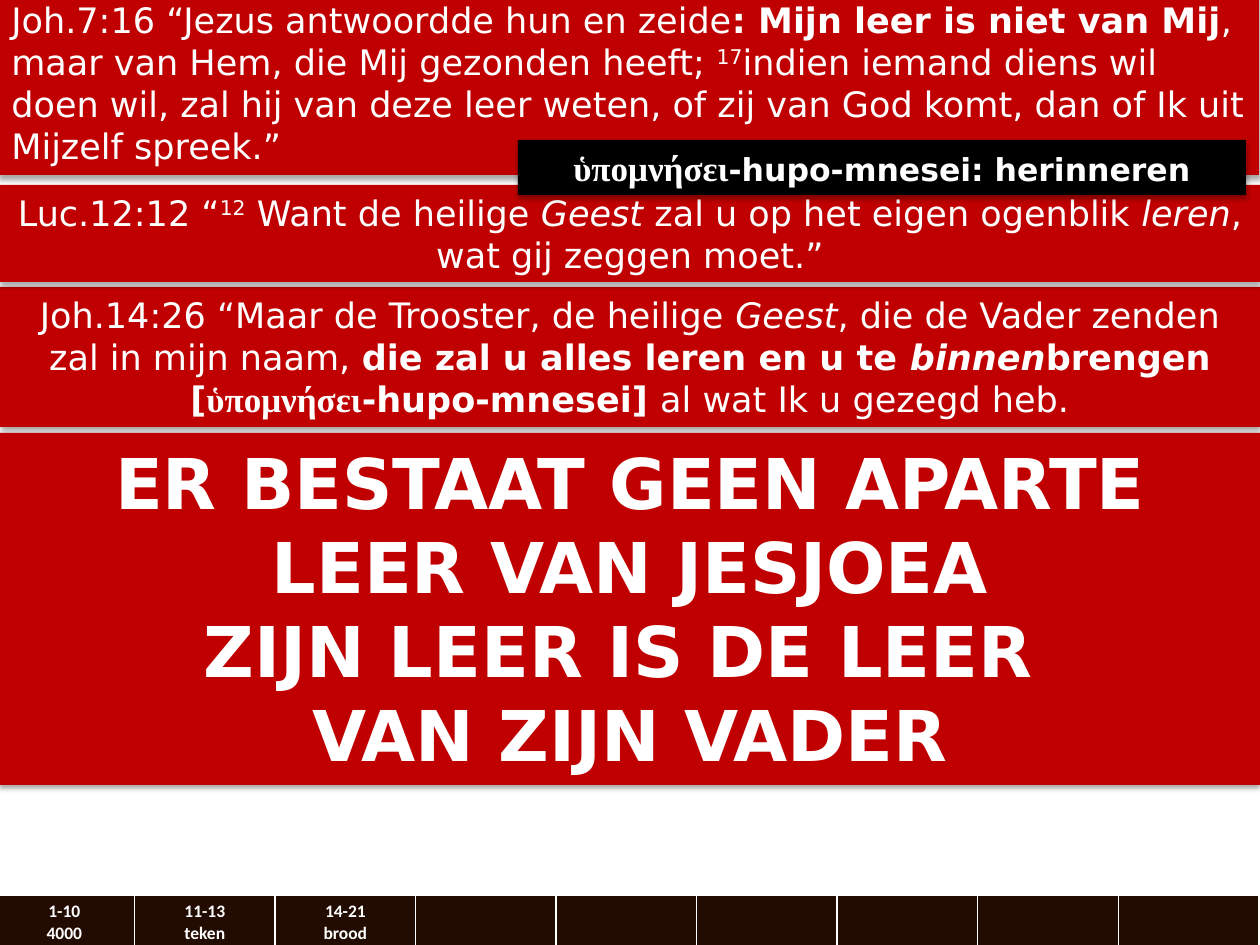
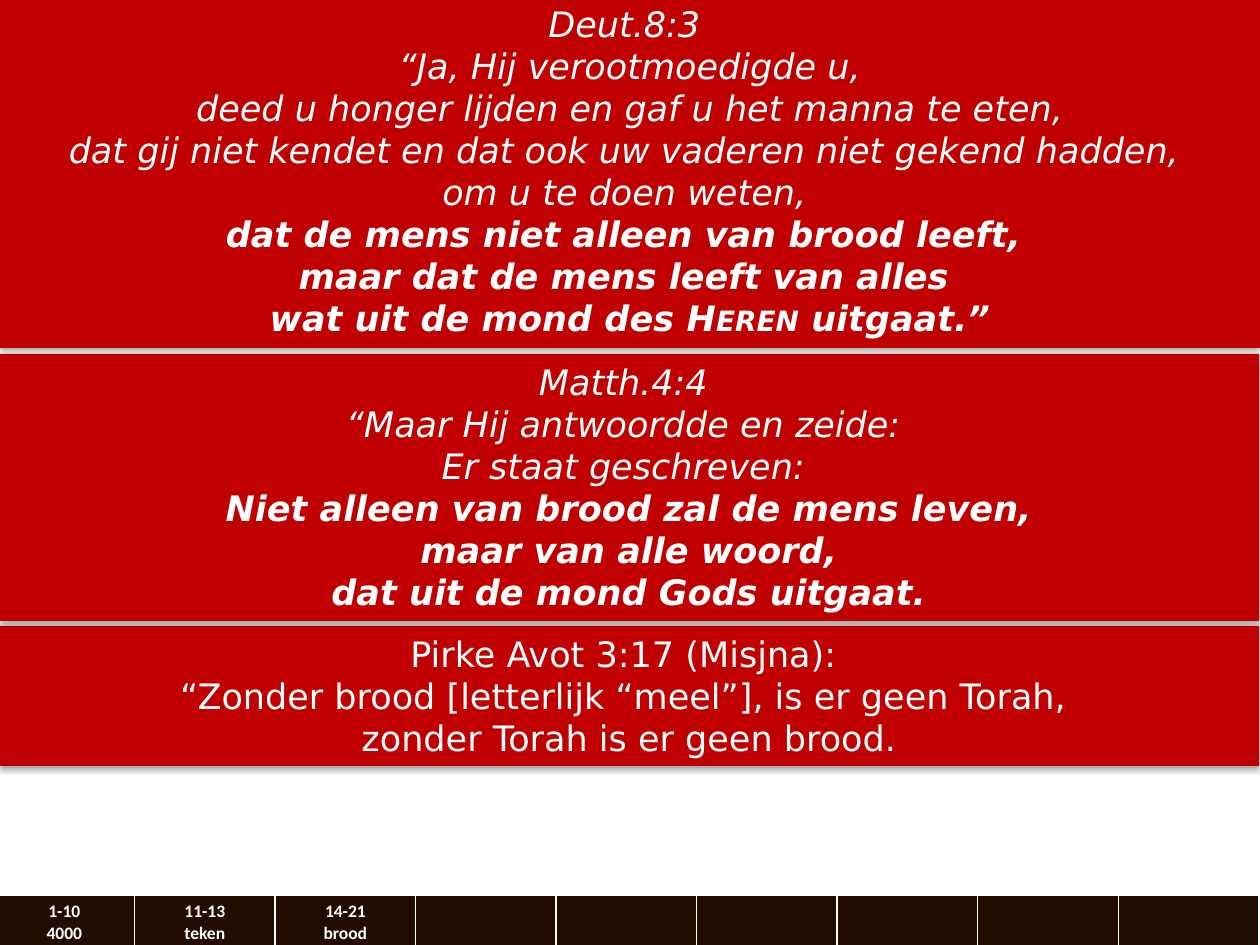
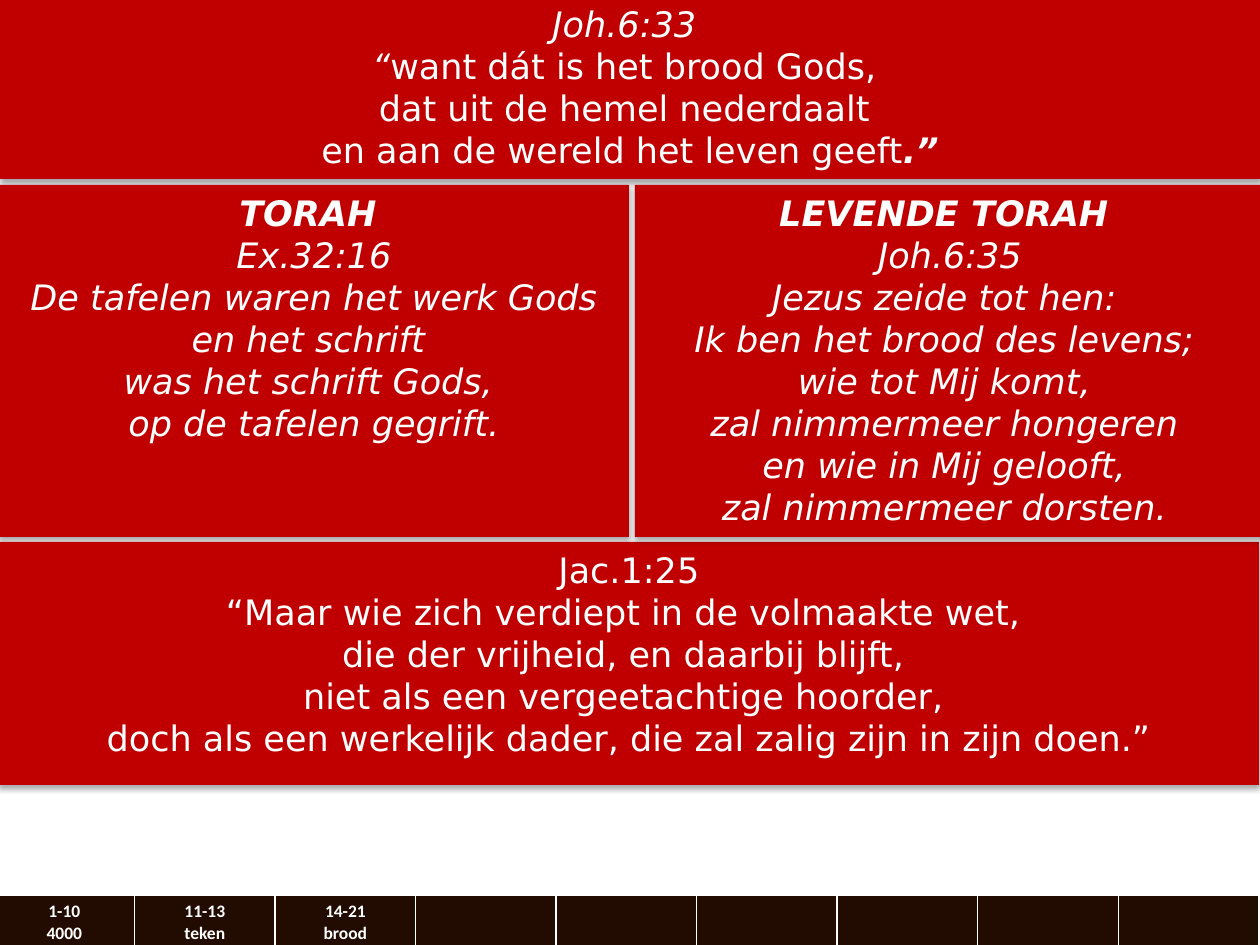
from lxml.etree import SubElement
from pptx import Presentation
from pptx.dml.color import RGBColor
from pptx.enum.shapes import MSO_SHAPE
from pptx.enum.text import MSO_ANCHOR, PP_ALIGN
from pptx.oxml.ns import qn
from pptx.util import Emu, Pt

RED = RGBColor(0xC0, 0x00, 0x00)
BLACK = RGBColor(0x00, 0x00, 0x00)
BROWN = RGBColor(0x22, 0x0B, 0x00)
WHITE = RGBColor(0xFF, 0xFF, 0xFF)
BODY_FONT = "DejaVu Sans"
GREEK_FONT = "Times New Roman"
FOOTER_FONT = "Calibri"
EMU_PER_PX = 914400 / 126
FOOTER_BOX = (-6, 895, 1265, 54)
FOOTER_COLUMNS = 9
FOOTER_LABELS = [("1-10", "4000"), ("11-13", "teken"), ("14-21", "brood")]

BOLD = {"bold": True}
ITALIC = {"italic": True}
BOLD_ITALIC = {"bold": True, "italic": True}
RAISED = {"baseline": 30000}
GREEK = {"bold": True, "font": GREEK_FONT}


def px(length):
    return Emu(round(length * EMU_PER_PX))


def lines(*texts, **style):
    return [[(text, style)] for text in texts]


def add_text(paragraph, text, size=20, font=BODY_FONT, bold=False, italic=False,
             baseline=0, small_caps=False):
    run = paragraph.add_run()
    run.text = text
    run.font.size = Pt(size)
    run.font.name = font
    run.font.bold = bold
    run.font.italic = italic
    run.font.color.rgb = WHITE
    properties = run.font._element
    if baseline:
        properties.set("baseline", str(baseline))
    if small_caps:
        properties.set("cap", "small")


def fill_frame(frame, paragraphs, alignment=PP_ALIGN.CENTER):
    for index, runs in enumerate(paragraphs):
        paragraph = frame.add_paragraph() if index else frame.paragraphs[0]
        paragraph.alignment = alignment
        for text, style in runs:
            add_text(paragraph, text, **style)


def add_shadow(shape):
    shape.shadow.inherit = False
    effects = shape._element.spPr.find(qn("a:effectLst"))
    shadow = SubElement(effects, qn("a:outerShdw"), blurRad="39370", dist="22860",
                        dir="5400000", rotWithShape="0")
    color = SubElement(shadow, qn("a:srgbClr"), val=str(BLACK))
    SubElement(color, qn("a:alpha"), val="35000")


def add_panel(slide, box, paragraphs, color=RED, alignment=PP_ALIGN.CENTER):
    shape = slide.shapes.add_shape(MSO_SHAPE.RECTANGLE, *map(px, box))
    shape.fill.solid()
    shape.fill.fore_color.rgb = color
    shape.line.fill.background()
    add_shadow(shape)
    frame = shape.text_frame
    frame.word_wrap = True
    frame.vertical_anchor = MSO_ANCHOR.TOP
    fill_frame(frame, paragraphs, alignment)


def add_cell_borders(cell):
    properties = cell._tc.get_or_add_tcPr()
    for side, points in (("L", 1), ("R", 1), ("T", 1), ("B", 3)):
        border = SubElement(properties, qn(f"a:ln{side}"), w=str(Pt(points)))
        fill = SubElement(border, qn("a:solidFill"))
        SubElement(fill, qn("a:srgbClr"), val=str(WHITE))


def add_footer(slide, box):
    table = slide.shapes.add_table(1, FOOTER_COLUMNS, *map(px, box)).table
    for column in table.columns:
        column.width = px(box[2] / FOOTER_COLUMNS)
    for cell in table.iter_cells():
        add_cell_borders(cell)
        cell.fill.solid()
        cell.fill.fore_color.rgb = BROWN
    for index, label in enumerate(FOOTER_LABELS):
        fill_frame(table.cell(0, index).text_frame,
                   lines(*label, size=10, font=FOOTER_FONT, bold=True))


def add_slide(presentation):
    slide = presentation.slides.add_slide(presentation.slide_layouts[6])
    add_footer(slide, FOOTER_BOX)
    return slide


def build_teaching_slide(presentation):
    slide = add_slide(presentation)
    add_panel(slide, (0, 287, 1260, 140), [[
        ("Joh.14:26 “Maar de Trooster, de heilige ", {}),
        ("Geest", ITALIC),
        (", die de Vader zenden zal in mijn naam, ", {}),
        ("die zal u alles leren en u te ", BOLD),
        ("binnen", BOLD_ITALIC),
        ("brengen [", BOLD),
        ("ὑπομνήσει", GREEK),
        ("-hupo-mnesei] ", BOLD),
        ("al wat Ik u gezegd heb.", {}),
    ]])
    add_panel(slide, (-1, -8, 1260, 183), [[
        ("Joh.7:16 “Jezus antwoordde hun en zeide", {}),
        (": Mijn leer is niet van Mij", BOLD),
        (", maar van Hem, die Mij gezonden heeft; ", {}),
        ("17", RAISED),
        ("indien iemand diens wil doen wil, zal hij van deze leer weten, "
         "of zij van God komt, dan of Ik uit Mijzelf spreek.”", {}),
    ]], alignment=PP_ALIGN.LEFT)
    add_panel(slide, (0, 185, 1260, 97), [[
        ("Luc.12:12 “", {}),
        ("12", RAISED),
        (" Want de heilige ", {}),
        ("Geest", ITALIC),
        (" zal u op het eigen ogenblik ", {}),
        ("leren", ITALIC),
        (", wat gij zeggen moet.”", {}),
    ]])
    add_panel(slide, (0, 433, 1260, 352), lines(
        "ER BESTAAT GEEN APARTE LEER VAN JESJOEA",
        "ZIJN LEER IS DE LEER ",
        "VAN ZIJN VADER",
        size=40, bold=True))
    add_panel(slide, (518, 140, 728, 55), [[
        ("ὑπομνήσει", GREEK),
        ("-hupo-mnesei: herinneren", {"size": 18, "bold": True}),
    ]], color=BLACK)


def build_bread_slide(presentation):
    slide = add_slide(presentation)
    add_panel(slide, (0, -4, 1260, 352), lines(
        "Deut.8:3 ",
        "“Ja, Hij verootmoedigde u,",
        " deed u honger lijden en gaf u het manna te eten, ",
        "dat gij niet kendet en dat ook uw vaderen niet gekend hadden, ",
        "om u te doen weten, ",
        **ITALIC,
    ) + lines(
        "dat de mens niet alleen van brood leeft, ",
        "maar dat de mens leeft van alles ",
        **BOLD_ITALIC,
    ) + [[
        ("wat uit de mond des ", BOLD_ITALIC),
        ("Heren", {**BOLD_ITALIC, "small_caps": True}),
        (" uitgaat.”", BOLD_ITALIC),
    ]])
    add_panel(slide, (-1, 354, 1260, 267), lines(
        "Matth.4:4 ",
        "“Maar Hij antwoordde en zeide: ",
        "Er staat geschreven: ",
        **ITALIC,
    ) + lines(
        "Niet alleen van brood zal de mens leven,",
        " maar van alle woord, ",
        "dat uit de mond Gods uitgaat.",
        **BOLD_ITALIC,
    ))
    add_panel(slide, (-1, 626, 1260, 140), lines(
        "Pirke Avot 3:17 (Misjna): ",
        "“Zonder brood [letterlijk “meel”], is er geen Torah, ",
        "zonder Torah is er geen brood."))


def build_torah_slide(presentation):
    slide = add_slide(presentation)
    add_panel(slide, (0, -4, 1260, 183), [
        *lines("Joh.6:33 ", **ITALIC),
        [("“", ITALIC), ("want dát is het brood Gods, ", {})],
        *lines("dat uit de hemel nederdaalt "),
        [("en aan de wereld het leven geeft", {}), (".”", BOLD_ITALIC)],
    ])
    add_panel(slide, (-1, 185, 630, 352), lines("TORAH ", **BOLD_ITALIC) + lines(
        "Ex.32:16",
        "De tafelen waren het werk Gods en het schrift ",
        "was het schrift Gods, ",
        "op de tafelen gegrift.",
        **ITALIC,
    ))
    add_panel(slide, (-1, 542, 1260, 243), lines(
        "Jac.1:25",
        "“Maar wie zich verdiept in de volmaakte wet, ",
        "die der vrijheid, en daarbij blijft, ",
        "niet als een vergeetachtige hoorder, ",
        "doch als een werkelijk dader, die zal zalig zijn in zijn doen.”"))
    add_panel(slide, (635, 185, 630, 352), lines("LEVENDE TORAH ", **BOLD_ITALIC) + lines(
        "Joh.6:35",
        "Jezus zeide tot hen: ",
        "Ik ben het brood des levens; ",
        "wie tot Mij komt, ",
        "zal nimmermeer hongeren ",
        "en wie in Mij gelooft, ",
        "zal nimmermeer dorsten. ",
        **ITALIC,
    ))


def main():
    presentation = Presentation()
    presentation.slide_width = px(1260)
    presentation.slide_height = px(945)
    build_teaching_slide(presentation)
    build_bread_slide(presentation)
    build_torah_slide(presentation)
    presentation.save("out.pptx")


if __name__ == "__main__":
    main()
